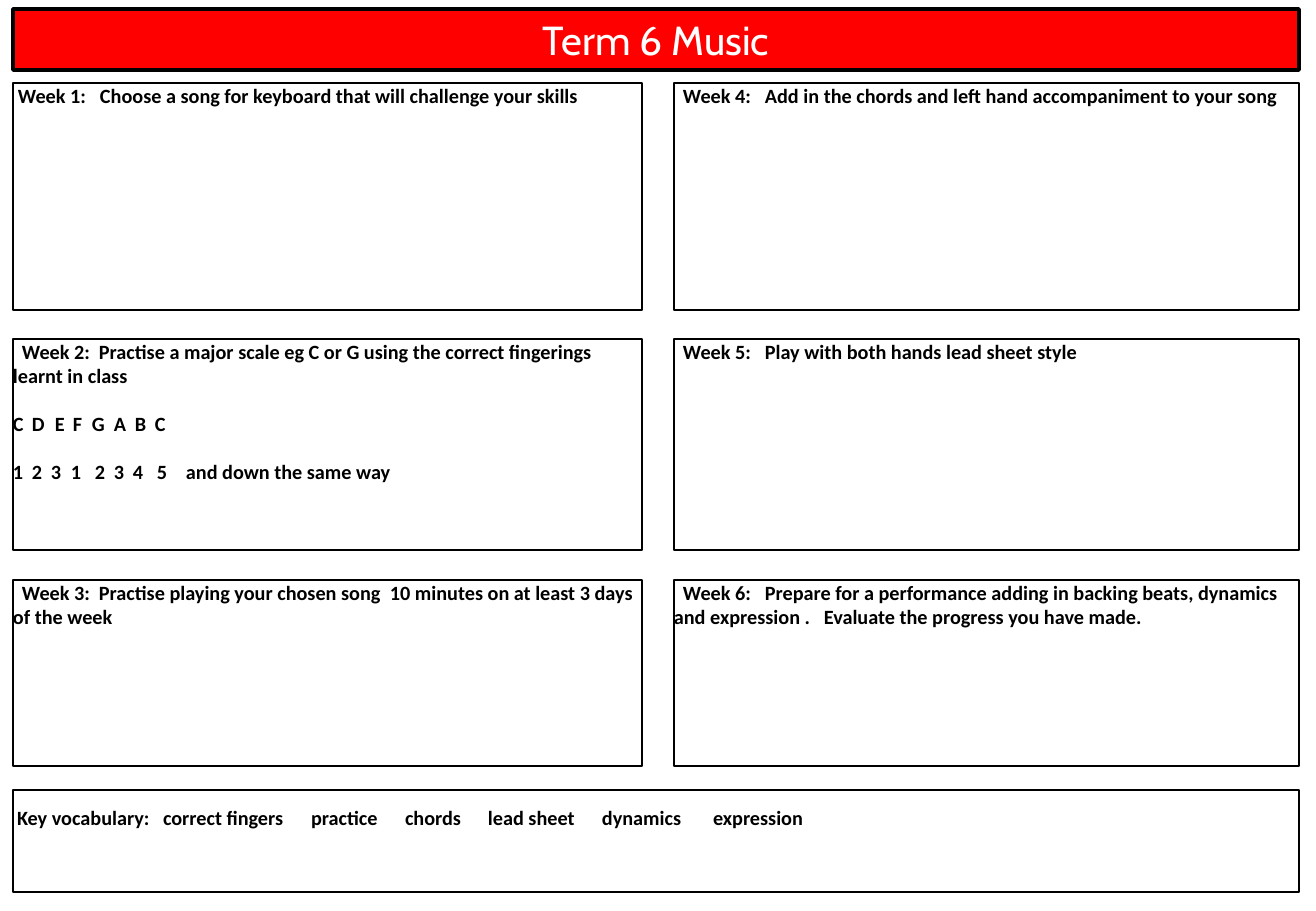
import pptx
import pptx.util
import pptx.dml.color
import pptx.enum.shapes
import pptx.enum.text
from pptx.oxml.ns import qn
from lxml import etree

EMU_PER_PX = 7526
PP = pptx.enum.text.PP_ALIGN
ANCHOR = pptx.enum.text.MSO_ANCHOR


def px(n):
    return pptx.util.Emu(n * EMU_PER_PX)


def color(value):
    return pptx.dml.color.RGBColor.from_string(value)


def add_box(s, x, y, w, h, line=1, fill=None, top=0):
    sp = s.shapes.add_shape(pptx.enum.shapes.MSO_SHAPE.RECTANGLE,
                            px(x), px(y), px(w), px(h))
    sp.shadow.inherit = False
    if fill:
        sp.fill.solid()
        sp.fill.fore_color.rgb = color(fill)
    else:
        sp.fill.background()
    sp.line.color.rgb = color("000000")
    sp.line.width = pptx.util.Pt(line)
    tf = sp.text_frame
    tf.word_wrap = True
    tf.vertical_anchor = ANCHOR.TOP
    tf.margin_left = tf.margin_right = tf.margin_bottom = 0
    tf.margin_top = px(top)
    return tf


def add_run(p, text, size=12, font="Calibri", ink="000000", bold=True):
    r = p.add_run()
    r.text = text
    r.font.size = pptx.util.Pt(size)
    r.font.name = font
    r.font.bold = bold
    r.font.color.rgb = color(ink)


def add_tabbed(p, parts, stops):
    """Write the parts on one line; an empty first part starts at the first stop."""
    p.alignment = PP.LEFT
    tabs = etree.SubElement(p._p.get_or_add_pPr(), qn("a:tabLst"))
    for stop in stops:
        etree.SubElement(tabs, qn("a:tab"), pos=str(px(stop)), algn="l")
    add_run(p, "\t".join(parts))


def add_week(s, box, stops, parts, more=()):
    tf = add_box(s, *box)
    add_tabbed(tf.paragraphs[0], parts, stops)
    for line, line_stops in more:
        p = tf.add_paragraph()
        p.space_before = pptx.util.Pt(13.9)
        add_tabbed(p, line, line_stops)


def main():
    prs = pptx.Presentation()
    prs.slide_width, prs.slide_height = px(1316), px(911)
    s = prs.slides.add_slide(prs.slide_layouts[6])

    # Title bar
    tf = add_box(s, 13, 9, 1286, 61, 2.25, "FF0000")
    tf.vertical_anchor = ANCHOR.MIDDLE
    p = tf.paragraphs[0]
    p.alignment = PP.CENTER
    add_run(p, "Term 6 Music", 24, "Cabin", "FFFFFF", False)

    # Weeks: two columns of three boxes
    scale = [
        ("C D E F G A B C".split(), [19, 42, 60, 79, 101, 122, 142]),
        ("1 2 3 1 2 3 4 5".split() + ["and down the same way"],
         [19, 38, 58, 82, 101, 120, 144, 173]),
    ]
    columns = [(13, 629), (674, 625)]
    rows = [(83, 227), (339, 211), (580, 186)]
    weeks = [
        ([5, 87], ["Choose a song for keyboard that will challenge your skills"]),
        ([9, 86], ["Practise a major scale eg C or G using the correct "
                   "fingerings learnt in class"], scale),
        ([9, 86, 377], ["Practise playing your chosen song",
                        "10 minutes on at least 3 days of the week"]),
        ([9, 91], ["Add in the chords and left hand accompaniment to your song"]),
        ([9, 91], ["Play with both hands lead sheet style"]),
        ([9, 91, 150], ["Prepare for a performance adding in backing beats, "
                        "dynamics and expression .",
                        "Evaluate the progress you have made."]),
    ]
    for i, (stops, parts, *more) in enumerate(weeks):
        (x, w), (y, h) = columns[i // 3], rows[i % 3]
        add_week(s, (x, y, w, h), stops, ["", f"Week {i + 1}:"] + parts, *more)

    # Key vocabulary
    tf = add_box(s, 13, 790, 1286, 102, top=20)
    p = tf.paragraphs[0]
    p.line_spacing = pptx.util.Pt(11.5)
    add_tabbed(p, ["", "Key vocabulary:", "correct fingers", "practice", "chords",
                   "lead sheet", "dynamics", "expression"],
               [4, 150, 298, 392, 475, 589, 700])

    prs.save("out.pptx")


if __name__ == "__main__":
    main()
